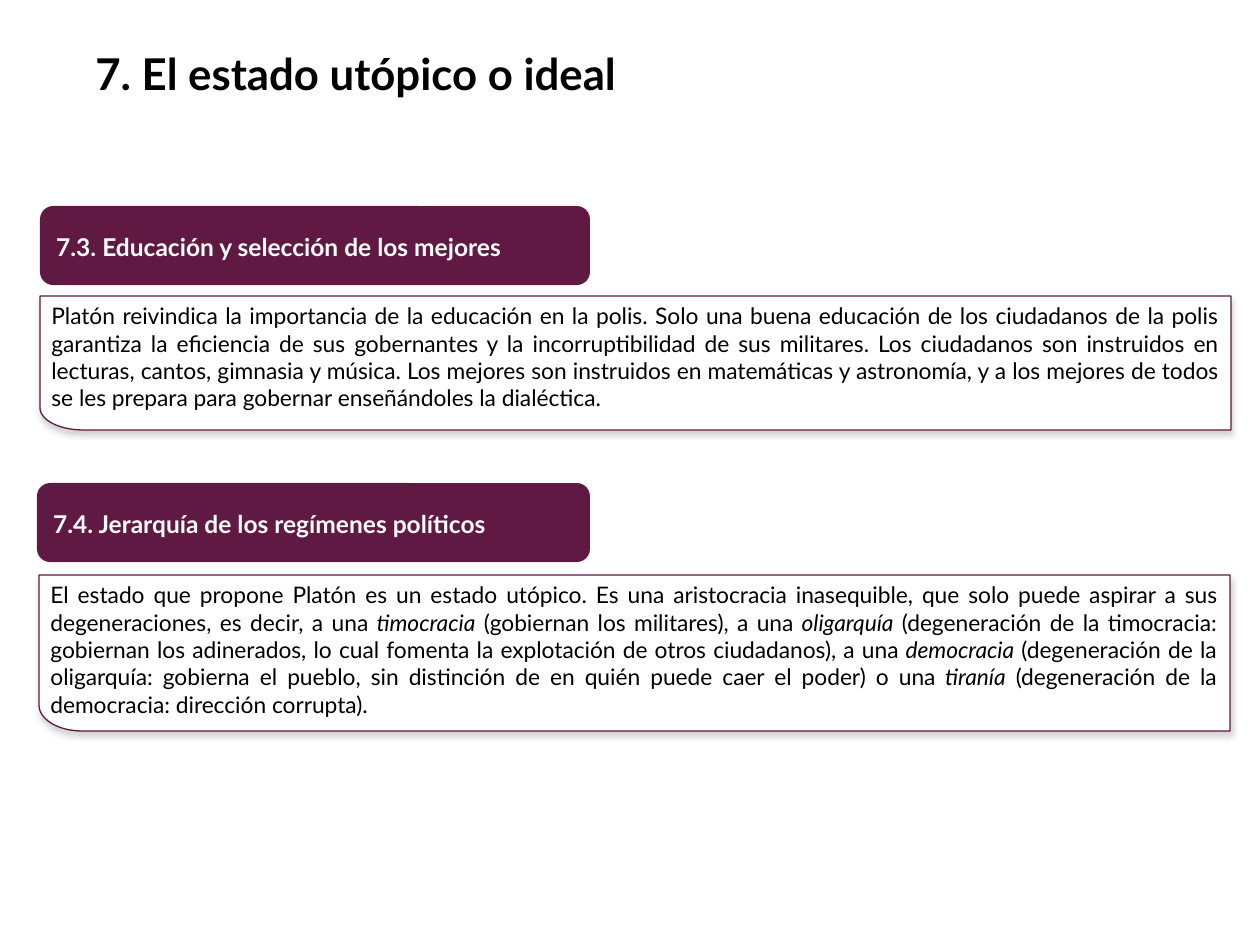
from math import cos, pi, sin

from lxml.etree import SubElement
from pptx import Presentation
from pptx.dml.color import RGBColor
from pptx.enum.shapes import MSO_SHAPE
from pptx.enum.text import MSO_ANCHOR, PP_ALIGN
from pptx.oxml.ns import qn
from pptx.util import Pt

EMU_PER_PX = 914400 / 126
PLUM = RGBColor(0x5F, 0x19, 0x42)
WHITE = RGBColor(0xFF, 0xFF, 0xFF)
BLACK = RGBColor(0x00, 0x00, 0x00)
FONT = "Lato"
CORNER_WIDTH = 43
CORNER_STEPS = 16

EDUCATION = [
    "Platón reivindica la importancia de la educación en la polis. Solo una buena "
    "educación de los ciudadanos de la polis garantiza la eficiencia de sus gobernantes "
    "y la incorruptibilidad de sus militares. Los ciudadanos son instruidos en lecturas, "
    "cantos, gimnasia y música. Los mejores son instruidos en matemáticas y astronomía, "
    "y a los mejores de todos se les prepara para gobernar enseñándoles la dialéctica.",
]
# Every second piece is in italics.
REGIMES = [
    "El estado que propone Platón es un estado utópico. Es una aristocracia inasequible, "
    "que solo puede aspirar a sus degeneraciones, es decir, a una ",
    "timocracia",
    " (gobiernan los militares), a una ",
    "oligarquía",
    " (degeneración de la timocracia: gobiernan los adinerados, lo cual fomenta la "
    "explotación de otros ciudadanos), a una ",
    "democracia",
    " (degeneración de la oligarquía: gobierna el pueblo, sin distinción de en quién "
    "puede caer el poder) o una ",
    "tiranía",
    " (degeneración de la democracia: dirección corrupta).",
]


def px(*lengths):
    return [round(length * EMU_PER_PX) for length in lengths]


def set_font(font, size, color, name=FONT, bold=False):
    font.name = name
    font.size = Pt(size)
    font.bold = bold
    font.color.rgb = color


def add_soft_shadow(shape):
    effects = SubElement(shape._element.spPr, qn("a:effectLst"))
    shadow = SubElement(effects, qn("a:outerShdw"), blurRad=str(Pt(3.1)),
                        dist=str(Pt(1.8)), dir="5400000", rotWithShape="0")
    color = SubElement(shadow, qn("a:srgbClr"), val="808080")
    SubElement(color, qn("a:alpha"), val="35000")


def add_panel(page, left, top, width, height):
    """Draw a white panel whose bottom left corner is a quarter ellipse."""
    right, bottom = left + width, top + height
    corner_height = height / 6
    angles = [pi / 2 * step / CORNER_STEPS for step in range(CORNER_STEPS + 1)]
    corner = [(left + CORNER_WIDTH * (1 - sin(angle)),
               bottom - corner_height * (1 - cos(angle))) for angle in angles]
    outline = [(right, top), (right, bottom)] + corner + [(left, top)]
    builder = page.shapes.build_freeform(*px(left, top))
    builder.add_line_segments([px(*point) for point in outline], close=True)
    panel = builder.convert_to_shape()
    panel.fill.solid()
    panel.fill.fore_color.rgb = WHITE
    panel.line.color.rgb = PLUM
    panel.line.width = Pt(0.75)
    add_soft_shadow(panel)


def add_body(page, left, top, width, height, pieces):
    box = page.shapes.add_textbox(*px(left, top, width, height))
    box.text_frame.word_wrap = True
    para = box.text_frame.paragraphs[0]
    para.alignment = PP_ALIGN.JUSTIFY
    for index, piece in enumerate(pieces):
        span = para.add_run()
        span.text = piece
        set_font(span.font, 13, BLACK)
        span.font.italic = index % 2 == 1


def add_heading(page, left, top, width, height, text):
    heading = page.shapes.add_shape(MSO_SHAPE.ROUNDED_RECTANGLE,
                                    *px(left, top, width, height))
    heading.shadow.inherit = False
    heading.fill.solid()
    heading.fill.fore_color.rgb = PLUM
    heading.line.fill.background()
    heading.text_frame.word_wrap = True
    heading.text_frame.vertical_anchor = MSO_ANCHOR.MIDDLE
    para = heading.text_frame.paragraphs[0]
    para.text = text
    para.alignment = PP_ALIGN.LEFT
    para.line_spacing = 1.1
    set_font(para.font, 14, WHITE, bold=True)


def add_title(page, text):
    box = page.shapes.add_textbox(*px(20, 25, 840, 74))
    box.text_frame.word_wrap = True
    para = box.text_frame.paragraphs[0]
    para.line_spacing = 1.3
    tab = para.add_run()
    tab.text = "\t"
    set_font(tab.font, 18, BLACK, name="Arial")
    span = para.add_run()
    span.text = text
    set_font(span.font, 25, BLACK, bold=True)


def main():
    deck = Presentation()
    deck.slide_width, deck.slide_height = px(1260, 945)
    page = deck.slides.add_slide(deck.slide_layouts[6])

    add_title(page, "7. El estado utópico o ideal")
    for left, top, height, pieces in ((40, 296, 134, EDUCATION),
                                      (39, 575, 156, REGIMES)):
        add_panel(page, left, top, 1191, height)
        add_body(page, left - 1, top, 1191, height, pieces)
    add_heading(page, 40, 206, 550, 79, "7.3. Educación y selección de los mejores")
    add_heading(page, 37, 483, 553, 79, "7.4. Jerarquía de los regímenes políticos")

    deck.save("out.pptx")


if __name__ == "__main__":
    main()
